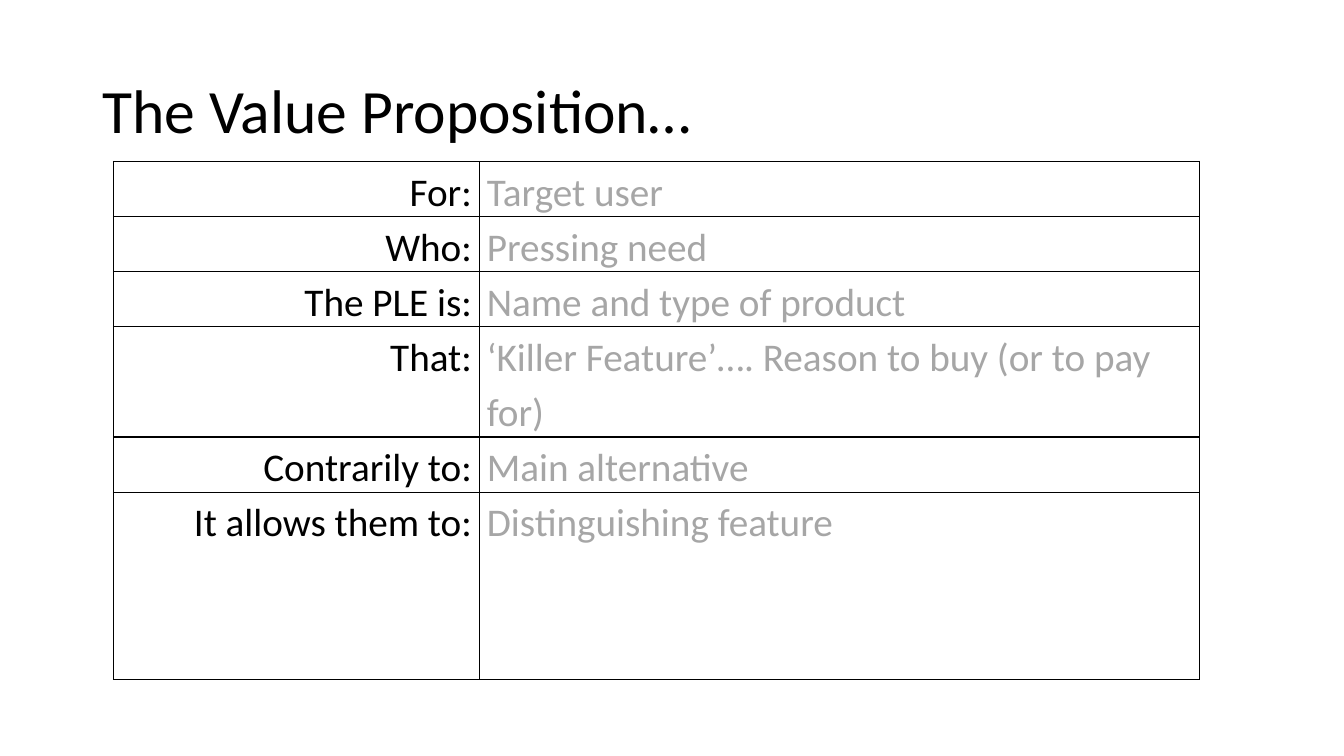
from lxml.etree import SubElement
from pptx import Presentation
from pptx.dml.color import RGBColor
from pptx.enum.text import MSO_ANCHOR, PP_ALIGN
from pptx.oxml.ns import qn
from pptx.util import Cm, Pt

COLORS = {"ink": "000000", "hint": "A6A6A6"}
PROPOSITION = [
    ("For:", "Target user"),
    ("Who:", "Pressing need"),
    ("The PLE is:", "Name and type of product"),
    ("That:", "‘Killer Feature’…. Reason to buy (or to pay for)"),
    ("Contrarily to:", "Main alternative"),
    ("It allows them to:", "Distinguishing feature"),
]
ROW_HEIGHTS = [0.71] * 5 + [4.72]
COLUMN_WIDTHS = [9.22, 18.14]


class SlideBuilder:
    font_name = "Calibri"

    def __init__(self, presentation):
        self.slide = presentation.slides.add_slide(presentation.slide_layouts[5])

    def set_text(self, frame, text, size, color, align, spacing):
        frame.text = text
        paragraph = frame.paragraphs[0]
        paragraph.alignment = align
        paragraph.line_spacing = spacing
        paragraph.font.name = self.font_name
        paragraph.font.size = Pt(size)
        paragraph.font.bold = False
        paragraph.font.color.rgb = RGBColor.from_string(COLORS[color])

    def title(self, text, left, top, width, height):
        heading = self.slide.shapes.title
        heading.left, heading.top = Cm(left), Cm(top)
        heading.width, heading.height = Cm(width), Cm(height)
        heading.text_frame.vertical_anchor = MSO_ANCHOR.MIDDLE
        heading.text_frame.word_wrap = True
        self.set_text(heading.text_frame, text, 44, "ink", PP_ALIGN.LEFT, 0.9)

    def border(self, cell):
        properties = cell._tc.get_or_add_tcPr()
        for position, side in enumerate(("a:lnL", "a:lnR", "a:lnT", "a:lnB")):
            edge = SubElement(properties, qn(side), w=str(Pt(1)))
            fill = SubElement(edge, qn("a:solidFill"))
            SubElement(fill, qn("a:srgbClr"), val=COLORS["ink"])
            properties.insert(position, edge)

    def cell(self, cell, text, color, align):
        cell.margin_left = cell.margin_right = Cm(0.19)
        cell.margin_top = cell.margin_bottom = 0
        cell.vertical_anchor = MSO_ANCHOR.TOP
        cell.fill.background()
        self.set_text(cell.text_frame, text, 28, color, align, 1.15)
        self.border(cell)

    def table(self, rows, left, top, widths, heights, frame_height):
        frame = self.slide.shapes.add_table(
            len(rows), len(widths), Cm(left), Cm(top), Cm(sum(widths)), Cm(sum(heights))
        )
        grid = frame.table
        grid.first_row = grid.horz_banding = False
        for column, width in zip(grid.columns, widths):
            column.width = Cm(width)
        for row, height, (label, hint) in zip(grid.rows, heights, rows):
            row.height = Cm(height)
            self.cell(row.cells[0], label, "ink", PP_ALIGN.RIGHT)
            self.cell(row.cells[1], hint, "hint", PP_ALIGN.LEFT)
        frame.height = Cm(frame_height)


def main():
    presentation = Presentation()
    presentation.slide_width, presentation.slide_height = Cm(33.87), Cm(19.05)
    builder = SlideBuilder(presentation)
    builder.title("The Value Proposition…", 2.33, 1.01, 29.21, 3.68)
    builder.table(PROPOSITION, 2.86, 4.07, COLUMN_WIDTHS, ROW_HEIGHTS, 12.5)
    presentation.save("out.pptx")


if __name__ == "__main__":
    main()
